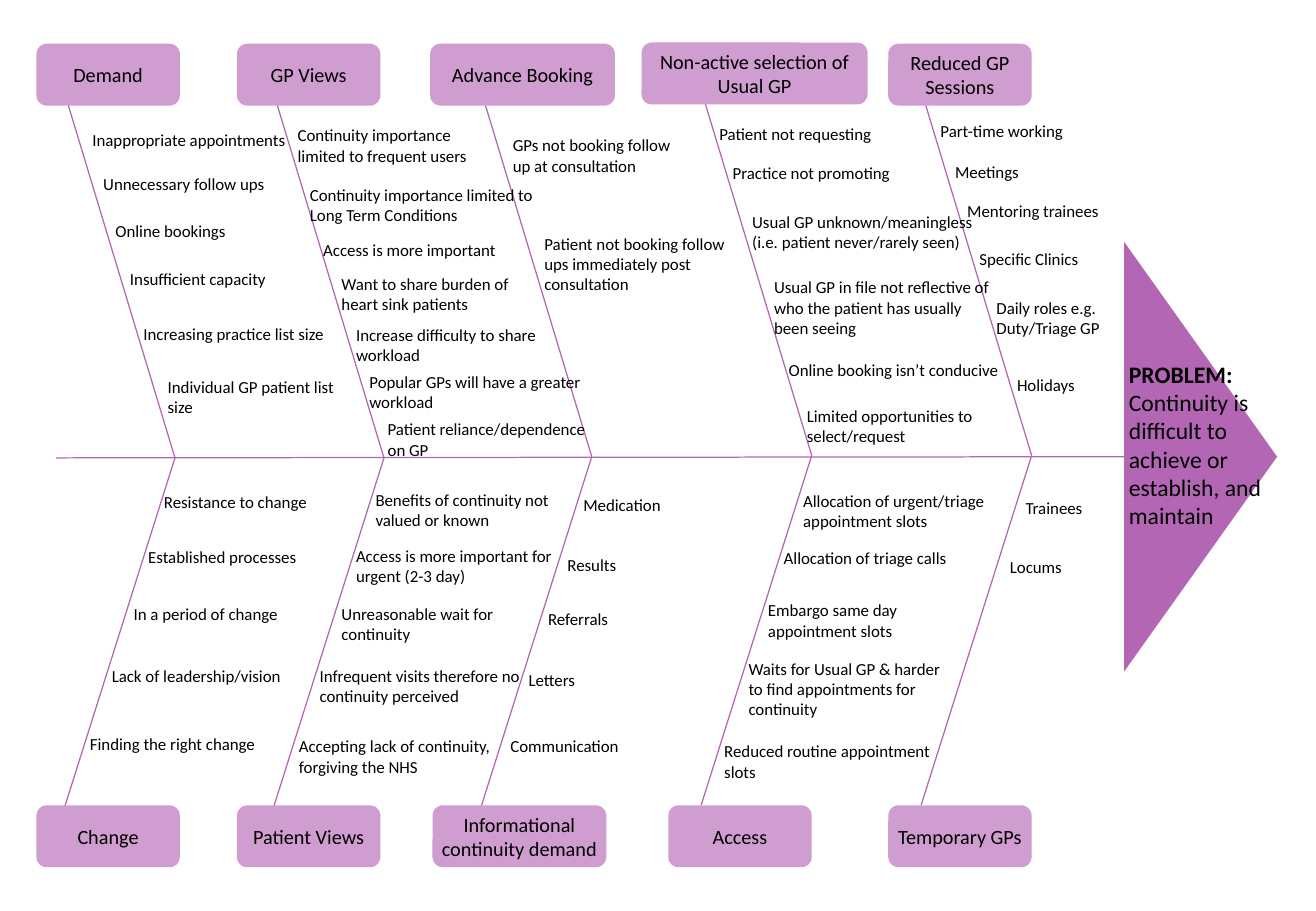
"""Fishbone diagram of why continuity of care is hard to achieve."""
from lxml import etree
from pptx import Presentation
from pptx.dml.color import RGBColor
from pptx.enum.shapes import MSO_CONNECTOR, MSO_SHAPE
from pptx.enum.text import MSO_ANCHOR, PP_ALIGN
from pptx.oxml.ns import qn
from pptx.util import Pt

PX = 9144
STRAIGHT = MSO_CONNECTOR.STRAIGHT
ROUNDED = MSO_SHAPE.ROUNDED_RECTANGLE
TRIANGLE = MSO_SHAPE.ISOSCELES_TRIANGLE
MIDDLE, TOP = MSO_ANCHOR.MIDDLE, MSO_ANCHOR.TOP
CENTER, LEFT = PP_ALIGN.CENTER, PP_ALIGN.LEFT

COLORS = {"bone": "B366B3", "label": "CF9DCF", "text": "000000"}
FONT = "Calibri"
INSET = 4
LABEL_HEIGHT = 51
BONE_LEAN, BONE_RISE, BONE_DROP = 91, 301, 288

JOINTS = [(144, 377), (316, 377), (487, 376), (668, 375), (849, 375)]

LABELS = [
    (30, 36, 118, "Demand"),
    (195, 36, 118, "GP Views"),
    (354, 36, 152, "Advance Booking"),
    (528, 35, 186, "Non-active selection of Usual GP"),
    (731, 36, 118, "Reduced GP Sessions"),
    (30, 663, 118, "Change"),
    (195, 663, 118, "Patient Views"),
    (356, 663, 143, "Informational continuity demand"),
    (550, 663, 118, "Access"),
    (731, 663, 118, "Temporary GPs"),
]

CAUSES = {
    "Demand": [
        (72, 103, 172, 39, "Inappropriate appointments"),
        (81, 139, 156, 39, "Unnecessary follow ups"),
        (91, 178, 137, 39, "Online bookings"),
        (103, 217, 137, 39, "Insufficient capacity"),
        (114, 262, 159, 39, "Increasing practice list size"),
        (134, 306, 164, 39, "Individual GP patient list size"),
    ],
    "Change": [
        (131, 401, 190, 32, "Resistance to change"),
        (118, 446, 190, 32, "Established processes"),
        (106, 493, 190, 32, "In a period of change"),
        (88, 544, 190, 32, "Lack of leadership/vision"),
        (70, 600, 190, 32, "Finding the right change"),
    ],
    "GP Views": [
        (241, 99, 167, 57, "Continuity importance limited to frequent users"),
        (251, 148, 194, 53, "Continuity importance limited to Long Term Conditions"),
        (262, 193, 190, 32, "Access is more important"),
        (277, 221, 170, 59, "Want to share burden of heart sink patients"),
        (289, 263, 209, 35, "Increase difficulty to share workload"),
        (300, 302, 202, 53, "Popular GPs will have a greater workload"),
        (315, 341, 182, 30, "Patient reliance/dependence on GP"),
    ],
    "Patient Views": [
        (305, 399, 182, 56, "Benefits of continuity not valued or known"),
        (289, 445, 184, 59, "Access is more important for urgent (2-3 day)"),
        (277, 493, 165, 32, "Unreasonable wait for continuity"),
        (259, 544, 175, 63, "Infrequent visits therefore no continuity perceived"),
        (242, 602, 184, 63, "Accepting lack of continuity, forgiving the NHS"),
    ],
    "Advance Booking": [
        (418, 107, 154, 62, "GPs not booking follow up at consultation"),
        (444, 188, 160, 53, "Patient not booking follow ups immediately post consultation"),
    ],
    "Informational continuity demand": [
        (476, 403, 102, 32, "Medication"),
        (463, 453, 102, 32, "Results"),
        (447, 497, 102, 32, "Referrals"),
        (431, 547, 102, 32, "Letters"),
        (416, 602, 102, 32, "Communication"),
    ],
    "Non-active selection of Usual GP": [
        (588, 98, 194, 34, "Patient not requesting"),
        (599, 130, 197, 32, "Practice not promoting"),
        (615, 170, 192, 57, "Usual GP unknown/meaningless (i.e. patient never/rarely seen)"),
        (633, 224, 186, 37, "Usual GP in file not reflective of who the patient has usually been seeing"),
        (645, 292, 198, 32, "Online booking isn’t conducive"),
        (660, 330, 196, 29, "Limited opportunities to select/request"),
    ],
    "Access": [
        (657, 400, 170, 56, "Allocation of urgent/triage appointment slots"),
        (641, 447, 163, 34, "Allocation of triage calls"),
        (628, 490, 179, 53, "Embargo same day appointment slots"),
        (612, 538, 167, 56, "Waits for Usual GP & harder to find appointments for continuity"),
        (592, 606, 197, 47, "Reduced routine appointment slots"),
    ],
    "Reduced GP Sessions": [
        (770, 95, 190, 32, "Part-time working"),
        (782, 129, 190, 32, "Meetings"),
        (792, 161, 190, 32, "Mentoring trainees"),
        (802, 201, 190, 32, "Specific Clinics"),
        (816, 241, 95, 47, "Daily roles e.g. Duty/Triage GP"),
        (833, 304, 66, 32, "Holidays"),
    ],
    "Temporary GPs": [
        (840, 406, 121, 32, "Trainees"),
        (827, 454, 135, 31, "Locums"),
    ],
}


class Fishbone:
    """Draws the parts of a fishbone diagram on one page."""

    def __init__(self, page):
        self.shapes = page.shapes

    def color(self, name):
        return RGBColor.from_string(COLORS[name])

    def line(self, x1, y1, x2, y2):
        bone = self.shapes.add_connector(STRAIGHT, *(n * PX for n in (x1, y1, x2, y2)))
        bone.line.color.rgb = self.color("bone")
        bone.line.width = Pt(0.75)
        etree.SubElement(bone._element.spPr, qn("a:effectLst"))

    def shape(self, kind, x, y, width, height, fill):
        shape = self.shapes.add_shape(kind, *(n * PX for n in (x, y, width, height)))
        shape.shadow.inherit = False
        shape.fill.solid()
        shape.fill.fore_color.rgb = self.color(fill)
        shape.line.fill.background()
        return shape

    def fill_text(self, box, lines, size, align=LEFT, anchor=TOP):
        frame = box.text_frame
        frame.word_wrap = True
        frame.vertical_anchor = anchor
        frame.margin_left = frame.margin_right = INSET * PX
        frame.margin_top = frame.margin_bottom = INSET * PX
        frame.text = "\n".join(lines)
        for para in frame.paragraphs:
            para.alignment = align
            para.font.name = FONT
            para.font.size = Pt(size)
            para.font.color.rgb = self.color("text")
        return frame

    def text(self, x, y, width, height, lines, size=10):
        box = self.shapes.add_textbox(*(n * PX for n in (x, y, width, height)))
        return self.fill_text(box, lines, size)

    def label(self, x, y, width, title):
        box = self.shape(ROUNDED, x, y, width, LABEL_HEIGHT, "label")
        self.fill_text(box, [title], 12, CENTER, MIDDLE)

    def head(self):
        arrow = self.shape(TRIANGLE, 811, 313, 354, 126, "bone")
        arrow.rotation = 90

    def problem(self):
        lines = ["PROBLEM:", "Continuity is difficult to achieve or establish, and maintain"]
        frame = self.text(925, 292, 126, 232, lines, 14)
        frame.paragraphs[0].font.bold = True


def main():
    deck = Presentation()
    deck.slide_width, deck.slide_height = 1083 * PX, 750 * PX
    fishbone = Fishbone(deck.slides.add_slide(deck.slide_layouts[6]))
    fishbone.head()
    fishbone.line(46, 377, 927, 376)
    for x, y in JOINTS:
        fishbone.line(x - BONE_LEAN, y - BONE_RISE, x, y)
        fishbone.line(x, y, x - BONE_LEAN, y + BONE_DROP)
    fishbone.problem()
    for x, y, width, title in LABELS:
        fishbone.label(x, y, width, title)
        for *place, cause in CAUSES[title]:
            fishbone.text(*place, [cause])
    deck.save("out.pptx")


if __name__ == "__main__":
    main()
